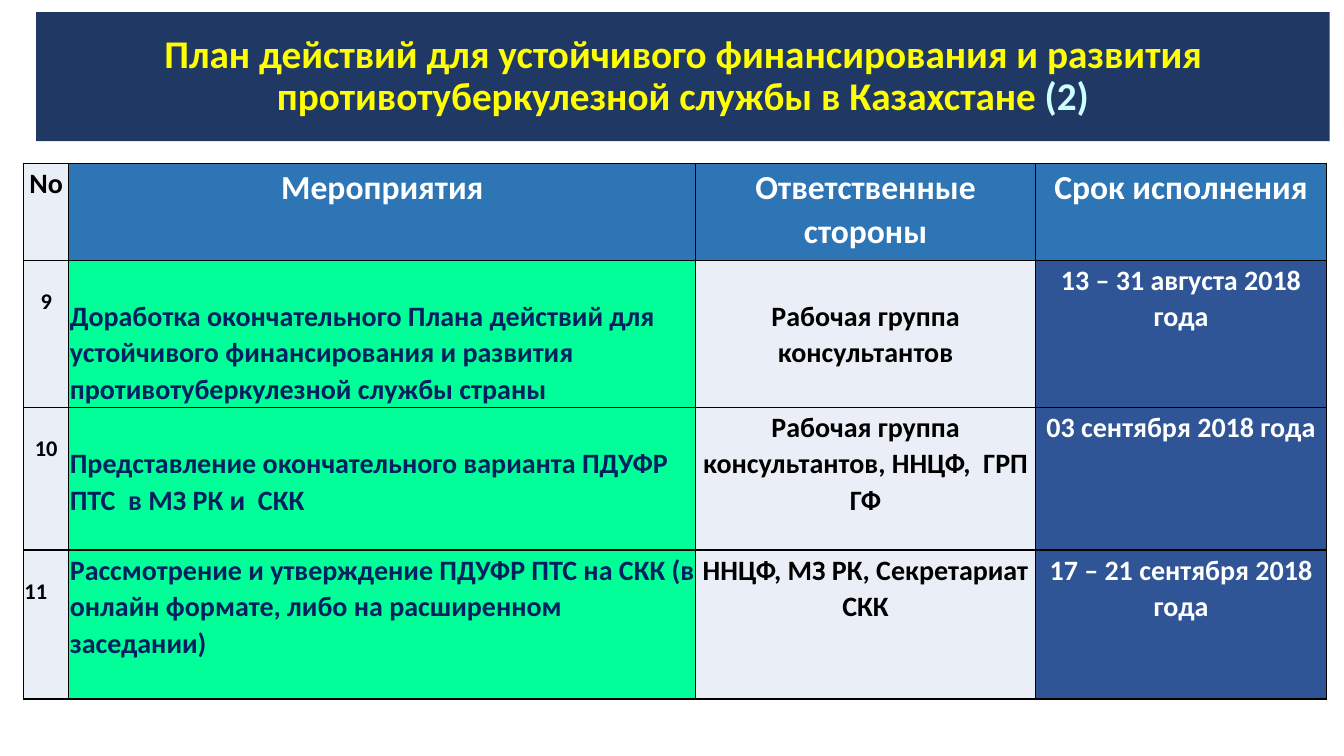
from lxml import etree
from pptx import Presentation
from pptx.dml.color import RGBColor
from pptx.enum.shapes import MSO_SHAPE
from pptx.enum.text import MSO_ANCHOR, PP_ALIGN
from pptx.oxml.ns import qn
from pptx.util import Pt

COLORS = {
    "navy": "203864", "yellow": "FFFF00", "ice": "CCFFFF", "white": "FFFFFF",
    "black": "000000", "pale": "EAEFF7", "header": "2E75B6",
    "green": "00FF99", "ink": "002060", "date": "2F5597",
}


def color(name):
    return RGBColor.from_string(COLORS[name])


def add_borders(cell):
    """Draw a thin black line on all four sides of the cell."""
    properties = cell._tc.get_or_add_tcPr()
    for position, side in enumerate(("lnL", "lnR", "lnT", "lnB")):
        line = etree.Element(qn(f"a:{side}"), w=str(Pt(1)))
        fill = etree.SubElement(line, qn("a:solidFill"))
        etree.SubElement(fill, qn("a:srgbClr"), val=COLORS["black"])
        properties.insert(position, line)


presentation = Presentation()
presentation.slide_width = Pt(960)
presentation.slide_height = Pt(540)
slide = presentation.slides.add_slide(presentation.slide_layouts[6])

# Title band
title = slide.shapes.add_shape(MSO_SHAPE.RECTANGLE, Pt(25.9), Pt(8.6), Pt(923.8), Pt(92.2))
title.shadow.inherit = False
title.fill.solid()
title.fill.fore_color.rgb = color("navy")
title.line.fill.background()
title.text_frame.word_wrap = True
title.text_frame.vertical_anchor = MSO_ANCHOR.MIDDLE
paragraph = title.text_frame.paragraphs[0]
paragraph.alignment = PP_ALIGN.CENTER
paragraph.line_spacing = 0.9
paragraph.font.name = "Calibri"
paragraph.font.size = Pt(28)
paragraph.font.bold = True
title_parts = [
    ("План действий для устойчивого финансирования и развития "
     "противотуберкулезной службы в Казахстане ", "yellow"),
    ("(2)", "ice"),
]
for text, text_color in title_parts:
    run = paragraph.add_run()
    run.text = text
    run.font.color.rgb = color(text_color)

# Action plan table
rows = [
    ["No", "Мероприятия", "Ответственные стороны", "Срок исполнения"],
    ["9", "Доработка окончательного Плана действий для устойчивого финансирования "
     "и развития противотуберкулезной службы страны",
     "Рабочая группа консультантов", "13 – 31 августа 2018 года"],
    ["10", "Представление окончательного варианта ПДУФР ПТС  в МЗ РК и  СКК",
     "Рабочая группа консультантов, ННЦФ,  ГРП ГФ", "03 сентября 2018 года"],
    ["11", "Рассмотрение и утверждение ПДУФР ПТС на СКК "
     "(в онлайн формате, либо на расширенном заседании)",
     "ННЦФ, МЗ РК, Секретариат СКК", "17 – 21 сентября 2018 года"],
]
column_widths = [32.4, 447.8, 242.6, 208.1]
row_heights = [69, 104, 102, 106.5]
# Fill, text colour and size of each column
header_styles = [("pale", "black", 20)] + [("header", "white", 24)] * 3
body_styles = [("pale", "black", 16), ("green", "ink", 20),
               ("pale", "black", 20), ("date", "white", 20)]
# Cells whose text starts one line lower: (row, column) -> offset
lowered = {(1, 0): 20, (2, 0): 20, (3, 0): 20, (1, 1): 26.5, (1, 2): 26.5, (2, 1): 26.5}
left_aligned = {(1, 1), (2, 1), (3, 1), (3, 0)}

table = slide.shapes.add_table(len(rows), len(column_widths), Pt(16.8), Pt(116.8),
                               Pt(sum(column_widths)), Pt(sum(row_heights))).table
for column, width in zip(table.columns, column_widths):
    column.width = Pt(width)
for row, height in zip(table.rows, row_heights):
    row.height = Pt(height)

for row_index, texts in enumerate(rows):
    styles = body_styles if row_index else header_styles
    for column_index, (text, style) in enumerate(zip(texts, styles)):
        fill_color, text_color, size = style
        place = (row_index, column_index)
        cell = table.cell(*place)
        cell.fill.solid()
        cell.fill.fore_color.rgb = color(fill_color)
        cell.margin_left = cell.margin_right = Pt(0.7)
        cell.margin_top = Pt(lowered.get(place, 0.7))
        cell.margin_bottom = Pt(0)
        add_borders(cell)
        cell.text = text
        paragraph = cell.text_frame.paragraphs[0]
        paragraph.alignment = PP_ALIGN.LEFT if place in left_aligned else PP_ALIGN.CENTER
        paragraph.line_spacing = 1.0 if size == 16 else 1.07
        paragraph.font.name = "Calibri"
        paragraph.font.size = Pt(size)
        paragraph.font.bold = True
        paragraph.font.color.rgb = color(text_color)

presentation.save("out.pptx")
